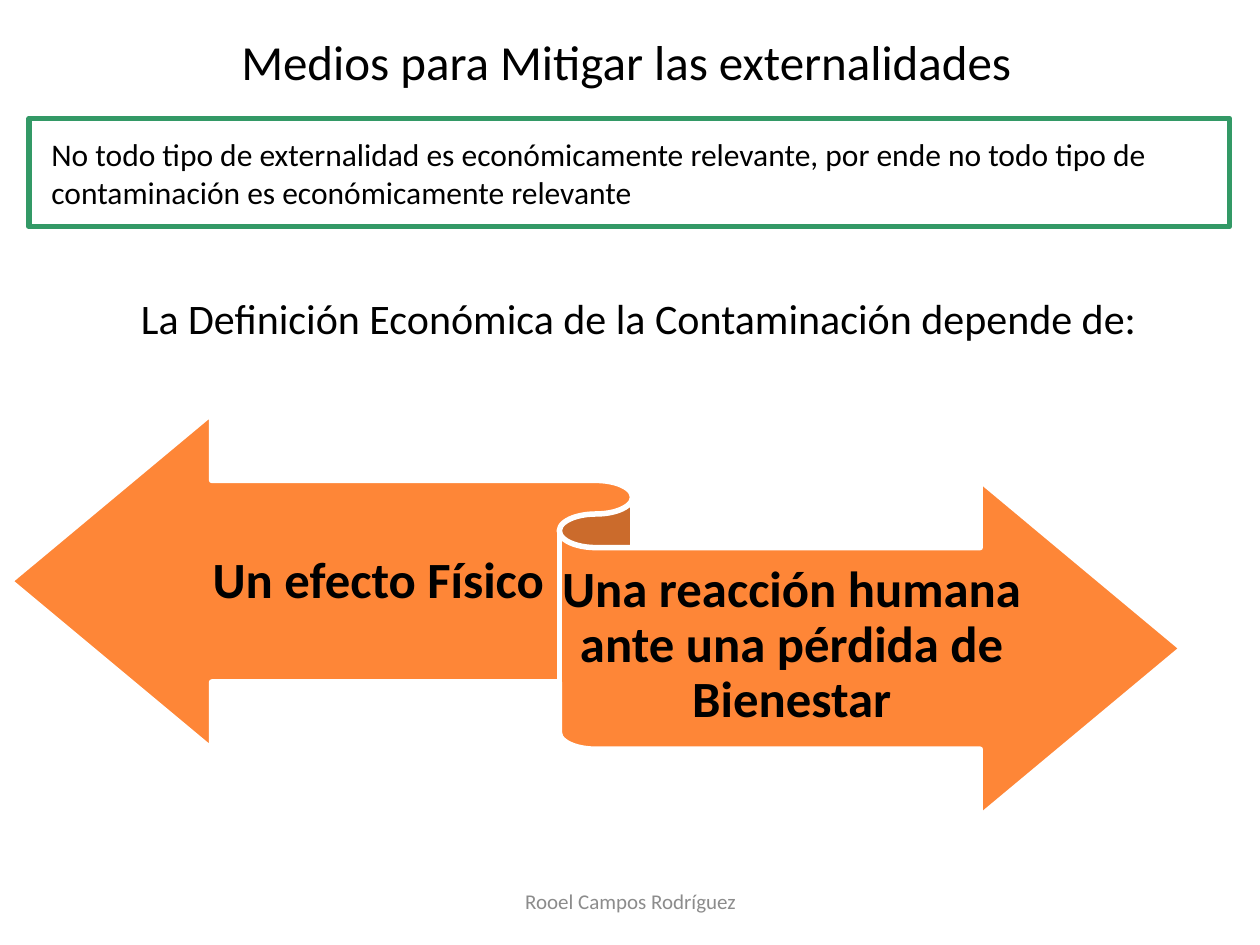
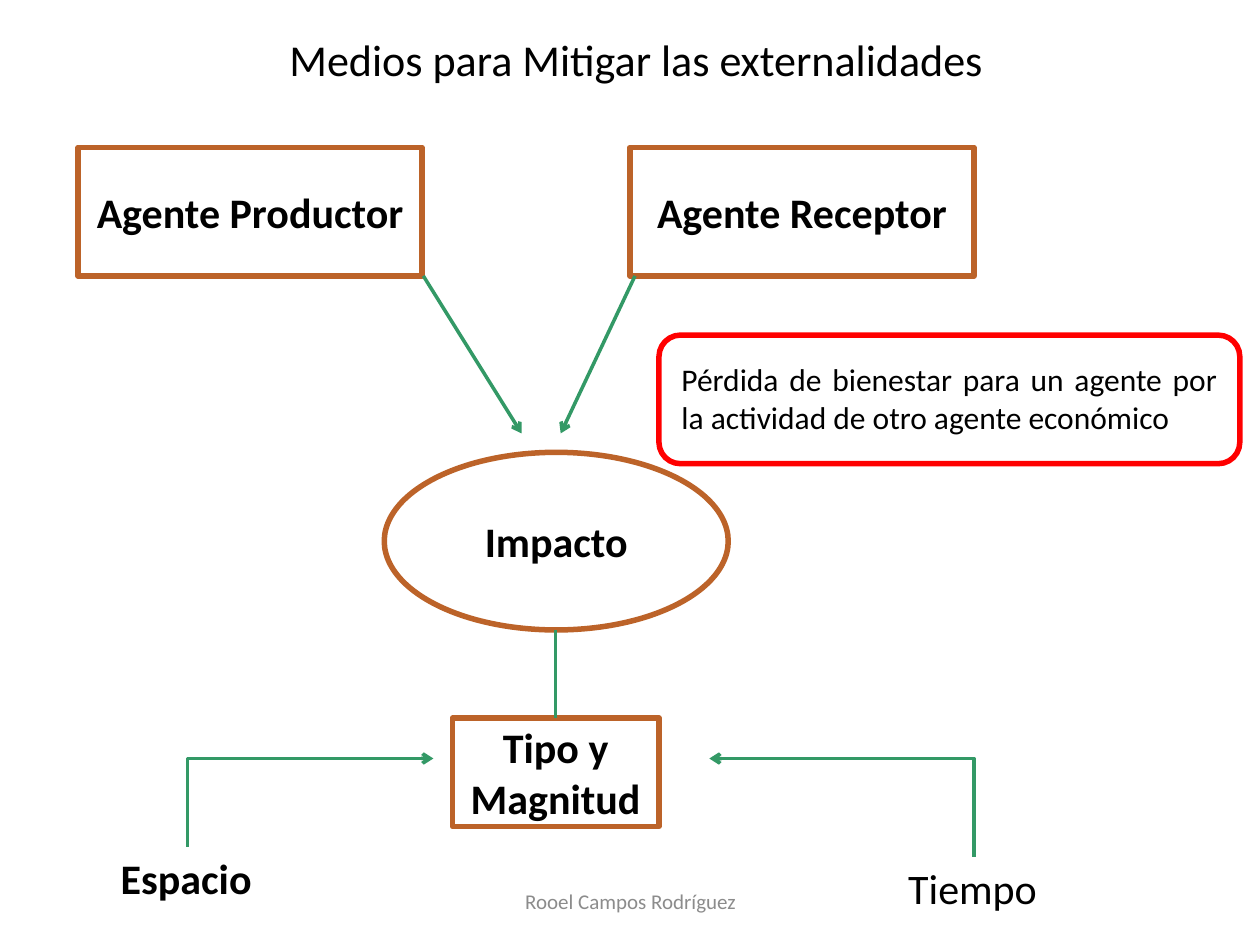
import pptx
import pptx.util
import pptx.dml.color
import pptx.enum.shapes
import pptx.enum.text
import pptx.oxml.ns
import pptx.oxml.xmlchemy

Inches = pptx.util.Inches
Pt = pptx.util.Pt
RGBColor = pptx.dml.color.RGBColor
SHAPE = pptx.enum.shapes.MSO_SHAPE
CONNECTOR = pptx.enum.shapes.MSO_CONNECTOR
ALIGN = pptx.enum.text.PP_ALIGN
ANCHOR = pptx.enum.text.MSO_ANCHOR
AUTO_SIZE = pptx.enum.text.MSO_AUTO_SIZE
OxmlElement = pptx.oxml.xmlchemy.OxmlElement
qn = pptx.oxml.ns.qn

BLACK = RGBColor(0x00, 0x00, 0x00)
WHITE = RGBColor(0xFF, 0xFF, 0xFF)
GRAY = RGBColor(0x8C, 0x8C, 0x8C)
GREEN = RGBColor(0x33, 0x99, 0x66)
ORANGE = RGBColor(0xFE, 0x86, 0x37)
BROWN = RGBColor(0xBC, 0x63, 0x29)
RED = RGBColor(0xFF, 0x00, 0x00)

FONT = "Calibri"
TITLE = "Medios para Mitigar las externalidades"
AUTHOR = "Rooel Campos Rodríguez"
TITLE_ONLY = 5

CENTERED = {"vertical_anchor": ANCHOR.MIDDLE, "word_wrap": True, "auto_size": AUTO_SIZE.NONE}
WRAPPED = {"word_wrap": True, "auto_size": AUTO_SIZE.SHAPE_TO_FIT_TEXT}
UNWRAPPED = {"word_wrap": False, "auto_size": AUTO_SIZE.SHAPE_TO_FIT_TEXT}
RIBBON_LABEL = {
    **CENTERED,
    "margin_left": 0,
    "margin_right": 0,
    "margin_top": Inches(0.11),
    "margin_bottom": Inches(0.12),
}


def apply_format(target, values):
    for attribute, value in values.items():
        setattr(target, attribute, value)


def write(frame, words, size, frame_format, color=BLACK, bold=False,
          align=ALIGN.CENTER, line_spacing=None):
    apply_format(frame, frame_format)
    paragraph = frame.paragraphs[0]
    apply_format(paragraph, {"alignment": align, "line_spacing": line_spacing})
    run = paragraph.add_run()
    run.text = words
    apply_format(run.font, {"name": FONT, "size": Pt(size), "bold": bold})
    run.font.color.rgb = color


def add_text(slide, box, words, size, frame_format, **style):
    label = slide.shapes.add_textbox(*map(Inches, box))
    write(label.text_frame, words, size, frame_format, **style)


def add_outline(slide, kind, box, color, width=3.15, fill=None):
    outline = slide.shapes.add_shape(kind, *map(Inches, box))
    outline.shadow.inherit = False
    if fill is None:
        outline.fill.background()
    else:
        outline.fill.solid()
        outline.fill.fore_color.rgb = fill
    outline.line.color.rgb = color
    outline.line.width = Pt(width)
    return outline


def add_concept(slide, kind, box, words):
    concept = add_outline(slide, kind, box, BROWN)
    write(concept.text_frame, words, 24, CENTERED, bold=True)
    return concept


def add_link(slide, start, end, kind=CONNECTOR.STRAIGHT, arrow_end=None):
    link = slide.shapes.add_connector(kind, *map(Inches, start + end))
    link.line.color.rgb = GREEN
    link.line.width = Pt(2)
    properties = link.element.spPr
    if arrow_end:
        arrowhead = OxmlElement(f"a:{arrow_end}")
        arrowhead.set("type", "arrow")
        properties.find(qn("a:ln")).append(arrowhead)
    properties.append(OxmlElement("a:effectLst"))
    return link


def add_corner_arrow(slide, tip, source):
    corner = add_link(slide, tip, source, CONNECTOR.ELBOW, "headEnd")
    corner.element.spPr.find(qn("a:prstGeom")).set("prst", "bentConnector2")


def start_slide(deck, title_box, title_size):
    slide = deck.slides.add_slide(deck.slide_layouts[TITLE_ONLY])
    title = slide.shapes.title
    placement = dict(zip(("left", "top", "width", "height"), map(Inches, title_box)))
    apply_format(title, placement)
    write(title.text_frame, TITLE, title_size, CENTERED)
    return slide


def add_author(slide):
    add_text(slide, (3.42, 6.95, 3.17, 0.4), AUTHOR, 12, CENTERED, color=GRAY)


def build_definition(deck):
    slide = start_slide(deck, (0.47, 0.16, 9, 0.64), 28)
    add_outline(slide, SHAPE.RECTANGLE, (0.23, 0.94, 9.53, 0.86), GREEN, 3)
    add_text(slide, (0.31, 1.02, 9.38, 0.71),
             "No todo tipo de externalidad es económicamente relevante, "
             "por ende no todo tipo de contaminación es económicamente relevante",
             18, WRAPPED, align=ALIGN.LEFT)
    add_outline(slide, SHAPE.LEFT_RIGHT_RIBBON, (0.08, 3.28, 9.3, 3.2), WHITE, fill=ORANGE)
    for box, condition in (
        ((1.33, 3.84, 3.35, 1.57), "Un efecto Físico"),
        ((4.45, 4.35, 3.67, 1.57), "Una reacción humana ante una pérdida de Bienestar"),
    ):
        add_text(slide, box, condition, 29, RIBBON_LABEL, bold=True, line_spacing=0.9)
    add_text(slide, (1.02, 2.27, 8.18, 0.5),
             "La Definición Económica de la Contaminación depende de:",
             24, UNWRAPPED, align=ALIGN.LEFT)
    add_author(slide)


def build_impact(deck):
    slide = start_slide(deck, (0.55, 0.23, 9, 0.48), 25.2)
    for left, agent in ((0.62, "Agente Productor"), (5, "Agente Receptor")):
        add_concept(slide, SHAPE.RECTANGLE, (left, 1.17, 2.73, 1.02), agent)
    add_concept(slide, SHAPE.OVAL, (3.05, 3.59, 2.73, 1.41), "Impacto")
    magnitude = add_concept(slide, SHAPE.RECTANGLE, (3.59, 5.7, 1.64, 0.86), "Tipo y Magnitud")

    add_text(slide, (0.86, 6.72, 1.25, 0.5), "Espacio", 24, UNWRAPPED,
             bold=True, align=ALIGN.LEFT)
    add_text(slide, (7.11, 6.8, 1.23, 0.5), "Tiempo", 24, UNWRAPPED, align=ALIGN.LEFT)

    for agent_corner, impact_point in (
        ((3.36, 2.19), (4.14, 3.44)),
        ((5.04, 2.19), (4.45, 3.44)),
    ):
        add_link(slide, agent_corner, impact_point, arrow_end="tailEnd")
    add_link(slide, (4.41, 5), (4.41, 5.7)).end_connect(magnitude, 0)
    add_corner_arrow(slide, (3.44, 6.02), (1.49, 6.72))
    add_corner_arrow(slide, (5.63, 6.02), (7.73, 6.8))

    add_outline(slide, SHAPE.ROUNDED_RECTANGLE, (5.23, 2.66, 4.61, 1.02), RED)
    add_text(slide, (5.31, 2.81, 4.45, 0.71),
             "Pérdida de bienestar para un agente por la actividad de otro agente económico",
             18, WRAPPED, align=ALIGN.JUSTIFY)
    add_author(slide)


def main():
    deck = pptx.Presentation()
    apply_format(deck, {"slide_width": Inches(10), "slide_height": Inches(7.5)})
    build_definition(deck)
    build_impact(deck)
    deck.save("out.pptx")


if __name__ == "__main__":
    main()
